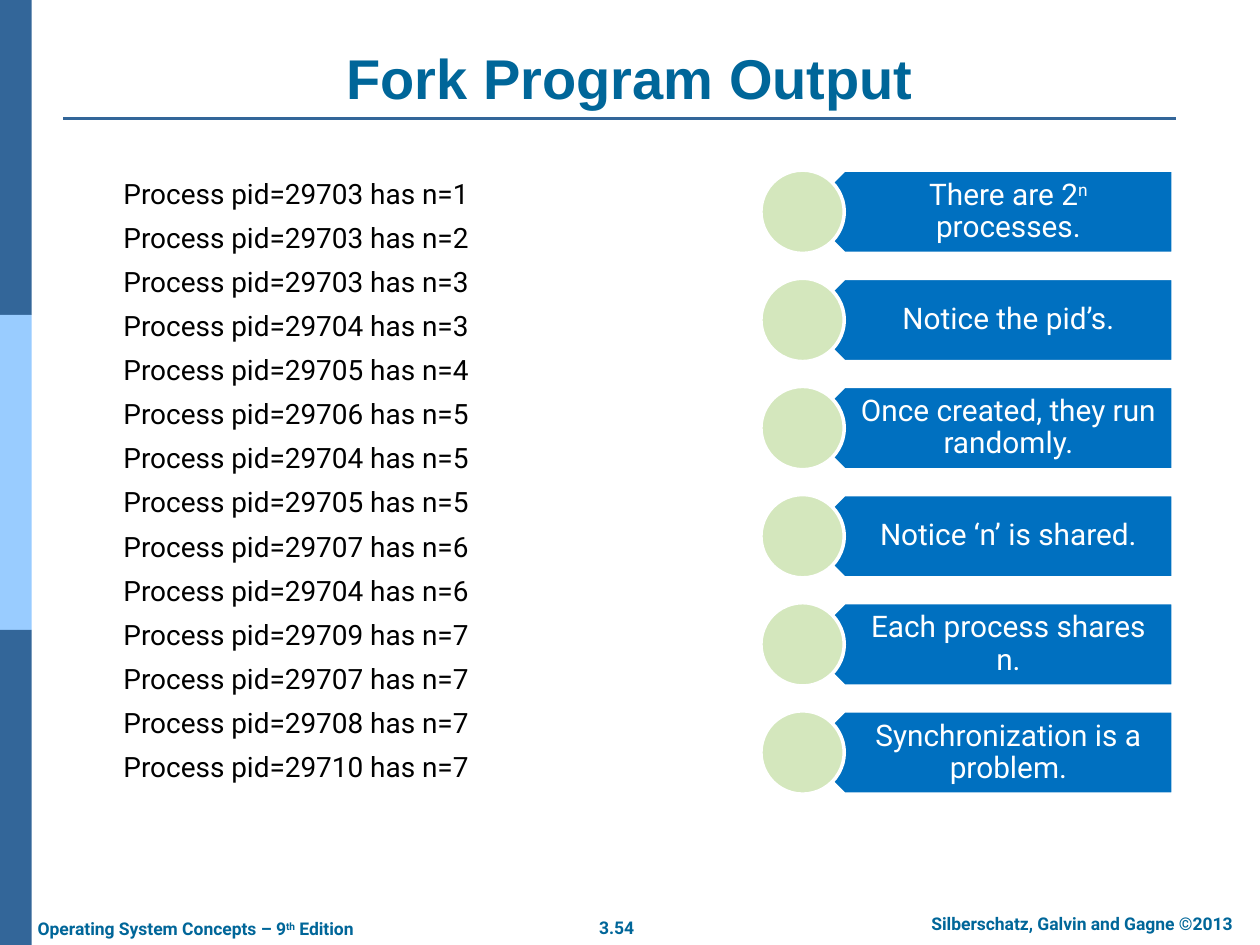
from dataclasses import dataclass

from lxml import etree
from pptx import Presentation
from pptx import util as u
from pptx.dml.color import RGBColor
from pptx.enum import shapes, text
from pptx.oxml.ns import qn
from pptx.util import Cm


@dataclass(frozen=True)
class Theme:
    navy: str = "336699"
    sky: str = "99CCFF"
    teal: str = "006699"
    blue: str = "0070C0"
    green: str = "D4E7BD"
    white: str = "FFFFFF"
    black: str = "000000"
    heading_font: str = "Arial"
    body_font: str = "Roboto"
    title_size: int = 32
    note_size: int = 17
    body_size: int = 16
    footer_size: int = 10


@dataclass(frozen=True)
class Box:
    """A region of the slide, in centimetres."""
    left: float
    top: float
    width: float
    height: float

    def lengths(self):
        return Cm(self.left), Cm(self.top), Cm(self.width), Cm(self.height)


THEME = Theme()
CENTER = text.PP_ALIGN.CENTER

# (pid, n) in the order in which the program prints them
OUTPUT = [(29703, 1), (29703, 2), (29703, 3), (29704, 3), (29705, 4),
          (29706, 5), (29704, 5), (29705, 5), (29707, 6), (29704, 6),
          (29709, 7), (29707, 7), (29708, 7), (29710, 7)]

# Text between carets is superscript
NOTES = ["There are 2^n^ processes.", "Notice the pid’s.",
         "Once created, they run randomly.", "Notice ‘n’ is shared.",
         "Each process shares n.", "Synchronization is a problem."]


def add_spans(para, words, size, color, font=THEME.body_font, bold=False):
    for index, part in enumerate(words.split("^")):
        span = para.add_run()
        span.text = part
        span.font.name = font
        span.font.size = u.Pt(size)
        span.font.bold = bold
        span.font.color.rgb = RGBColor.from_string(color)
        if index % 2:
            span._r.get_or_add_rPr().set("baseline", "30000")


def add_text(page, area, lines, size, color, align=None, wrap=True,
             anchor=text.MSO_ANCHOR.TOP, gap=0, **style):
    frame = page.shapes.add_textbox(*area.lengths()).text_frame
    frame.word_wrap = wrap
    frame.vertical_anchor = anchor
    for index, line in enumerate(lines):
        para = frame.add_paragraph() if index else frame.paragraphs[0]
        para.alignment = align
        if index:
            para.space_before = u.Pt(gap)
        add_spans(para, line, size, color, **style)
    return frame


def add_block(page, kind, area, fill, outline=None):
    block = page.shapes.add_shape(kind, *area.lengths())
    block.shadow.inherit = False
    block.fill.solid()
    block.fill.fore_color.rgb = RGBColor.from_string(fill)
    if outline:
        block.line.color.rgb = RGBColor.from_string(outline)
        block.line.width = u.Pt(2)
    else:
        block.line.fill.background()
    return block


def add_side_band(page, area):
    colors = [THEME.navy, THEME.sky, THEME.navy]
    height = area.height / len(colors)
    for row, color in enumerate(colors):
        part = Box(area.left, area.top + row * height, area.width, height)
        add_block(page, shapes.MSO_SHAPE.RECTANGLE, part, color)


def add_title(page, area):
    add_text(page, area, ["Fork Program Output"], THEME.title_size, THEME.teal,
             CENTER, anchor=text.MSO_ANCHOR.BOTTOM,
             font=THEME.heading_font, bold=True)
    # Rule under the title
    y = Cm(area.top + area.height + 0.03)
    rule = page.shapes.add_connector(shapes.MSO_CONNECTOR.STRAIGHT,
                                     Cm(area.left), y, Cm(23.7), y)
    rule.line.color.rgb = RGBColor.from_string(THEME.navy)
    rule.line.width = u.Pt(1.5)
    etree.SubElement(rule._element.spPr, qn("a:effectLst"))


def add_output(page, area):
    lines = [f"Process pid={pid} has n={n}" for pid, n in OUTPUT]
    add_text(page, area, lines, THEME.body_size, THEME.black, gap=6)


def add_note(page, area, words):
    size = area.height
    right = area.left + area.width

    # Arrow pointing left, starting at the middle of the disc
    start = area.left + size / 2
    add_block(page, shapes.MSO_SHAPE.PENTAGON,
              Box(start, area.top, right - start, size),
              THEME.blue, THEME.white).rotation = 180

    # Label
    start = area.left + size * 0.75
    frame = add_text(page, Box(start, area.top, right - start, size), [words],
                     THEME.note_size, THEME.white, CENTER,
                     anchor=text.MSO_ANCHOR.MIDDLE)
    frame.margin_left, frame.margin_right = Cm(0.74), Cm(0.33)
    frame.margin_top = frame.margin_bottom = Cm(0.18)
    frame.paragraphs[0].line_spacing = 0.9

    # Disc
    add_block(page, shapes.MSO_SHAPE.OVAL,
              Box(area.left, area.top, size, size), THEME.green, THEME.white)


def add_notes(page, area):
    height = 1.68
    pitch = (area.height - height) / (len(NOTES) - 1)
    for row, words in enumerate(NOTES):
        add_note(page, Box(area.left, area.top + row * pitch,
                           area.width, height), words)


def add_footer(page, area):
    # Offset from the left, offset from the top, width, words, align, wrap
    parts = [
        (0, 0.1, 7.34, "Operating System Concepts – 9^th^ Edition", None, False),
        (11.3, 0.07, 1.24, "3.54", CENTER, False),
        (17.53, 0, 7.54, "Silberschatz, Galvin and Gagne ©2013", CENTER, True),
    ]
    for x, y, width, words, align, wrap in parts:
        add_text(page, Box(area.left + x, area.top + y, width, area.height),
                 [words], THEME.footer_size, THEME.teal, align, wrap, bold=True)


def main():
    deck = Presentation()
    deck.slide_width, deck.slide_height = Cm(25.4), Cm(19.05)
    page = deck.slides.add_slide(deck.slide_layouts[6])
    add_side_band(page, Box(0, 0, 0.64, 19.05))
    add_title(page, Box(1.27, 0.76, 22.86, 1.6))
    add_output(page, Box(2.24, 3.43, 11.23, 12.57))
    add_notes(page, Box(15.34, 3.43, 8.31, 12.58))
    add_footer(page, Box(0.51, 18.29, 24.89, 0.69))
    deck.save("out.pptx")


if __name__ == "__main__":
    main()
